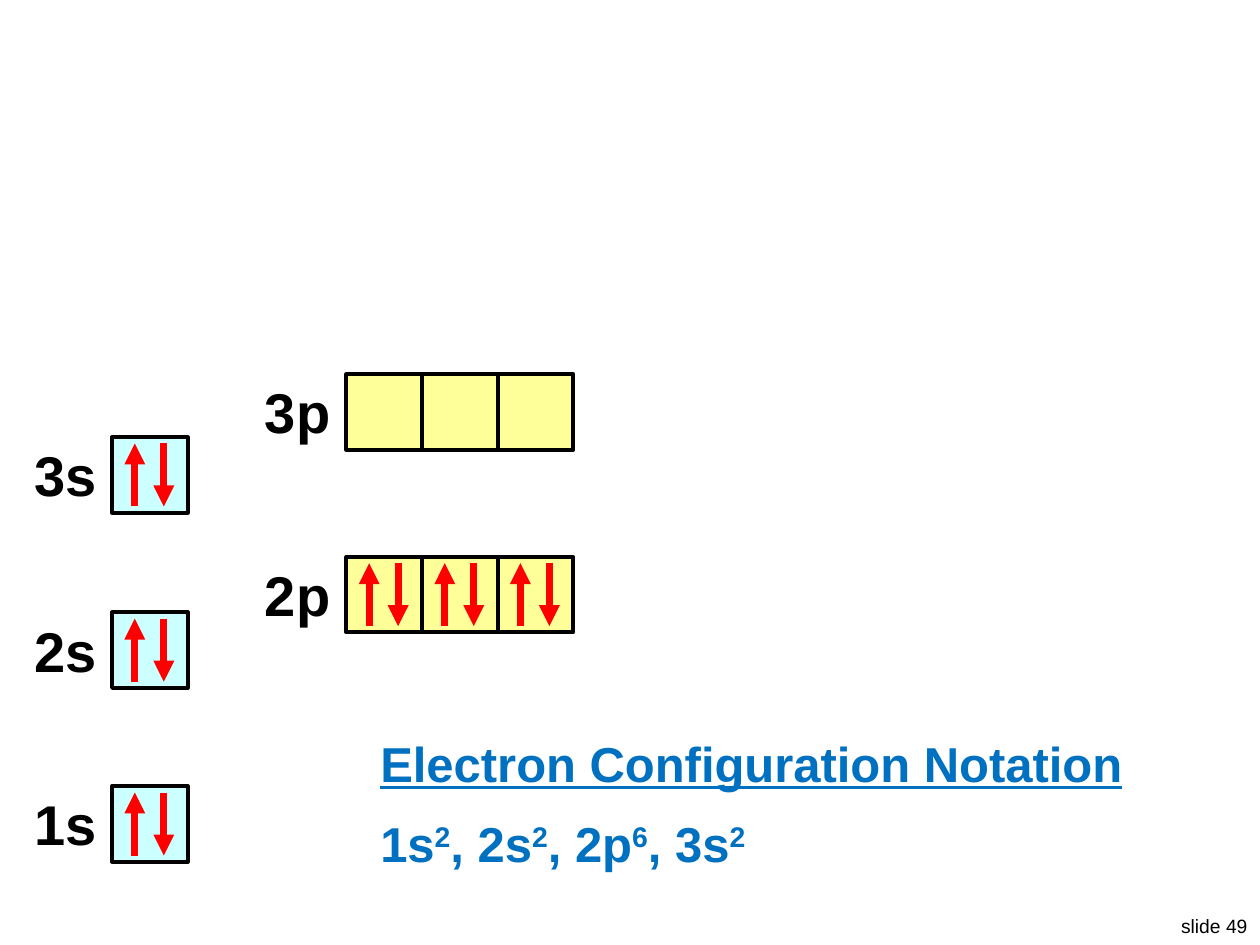
from lxml import etree
from pptx import Presentation
from pptx.dml.color import RGBColor
from pptx.enum.shapes import MSO_CONNECTOR, MSO_SHAPE
from pptx.enum.text import MSO_AUTO_SIZE, PP_ALIGN
from pptx.oxml.ns import qn
from pptx.util import Inches, Pt

RECTANGLE = MSO_SHAPE.RECTANGLE
STRAIGHT = MSO_CONNECTOR.STRAIGHT
LEFT, RIGHT = PP_ALIGN.LEFT, PP_ALIGN.RIGHT
FIT_SHAPE = MSO_AUTO_SIZE.SHAPE_TO_FIT_TEXT

BLACK, RED, BLUE = "000000", "FF0000", "0070C0"
CELL = 0.6
ARROW_INSET, ARROW_LENGTH = 0.05, 0.5
UP_X, DOWN_X = 0.18, 0.41

SUBSHELLS = {
    "s": {"left": 0.89, "label": (0.17, 0.7), "cells": 1, "fill": "CCFFFF"},
    "p": {"left": 2.75, "label": (2, 0.72), "cells": 3, "fill": "FFFF99"},
}
ORBITALS = [
    ("1s", 6.24, True),
    ("2s", 4.86, True),
    ("3s", 3.47, True),
    ("2p", 4.42, True),
    ("3p", 2.97, False),
]
HEADING = "Electron Configuration Notation"
CONFIGURATION = [("1s", "2"), (", 2s", "2"), (", 2p", "6"), (", 3s", "2")]


def color(value):
    """Turn a hex string into a colour."""
    return RGBColor.from_string(value)


def add_span(para, text, size, ink=BLACK, bold=False, underline=False, raised=False):
    """Add one formatted run of text to a paragraph."""
    span = para.add_run()
    span.text = text
    font = span.font
    font.name, font.size = "Arial", Pt(size)
    font.bold, font.underline = bold, underline
    font.color.rgb = color(ink)
    if raised:
        span._r.get_or_add_rPr().set("baseline", "30000")


def add_text(page, paragraphs, left, top, width, height, align=LEFT, gap=0):
    """Add a text box whose paragraphs are lists of (text, format) pairs."""
    box = page.shapes.add_textbox(Inches(left), Inches(top), Inches(width), Inches(height))
    frame = box.text_frame
    frame.word_wrap = False
    frame.auto_size = FIT_SHAPE
    for index, spans in enumerate(paragraphs):
        para = frame.paragraphs[0] if index == 0 else frame.add_paragraph()
        para.alignment = align
        if index < len(paragraphs) - 1:
            para.space_after = Pt(gap)
        for text, style in spans:
            add_span(para, text, **style)


def add_cell(page, left, top, fill):
    """Add one orbital box."""
    cell = page.shapes.add_shape(RECTANGLE, Inches(left), Inches(top), Inches(CELL), Inches(CELL))
    cell.shadow.inherit = False
    cell.fill.solid()
    cell.fill.fore_color.rgb = color(fill)
    cell.line.color.rgb = color(BLACK)
    cell.line.width = Pt(2.25)


def add_electron(page, x, start, end):
    """Add one vertical spin arrow pointing from start to end."""
    arrow = page.shapes.add_connector(STRAIGHT, Inches(x), Inches(start), Inches(x), Inches(end))
    arrow.line.color.rgb = color(RED)
    arrow.line.width = Pt(4)
    etree.SubElement(arrow.line._get_or_add_ln(), qn("a:tailEnd"), type="triangle")
    etree.SubElement(arrow._element.spPr, qn("a:effectLst"))


def add_orbital(page, name, top, filled):
    """Add a labelled row of orbital boxes with paired electrons if filled."""
    subshell = SUBSHELLS[name[-1]]
    label_left, label_width = subshell["label"]
    label = [[(name, {"size": 32, "bold": True})]]
    add_text(page, label, label_left, top - 0.02, label_width, 0.64, align=RIGHT)
    lefts = [subshell["left"] + CELL * index for index in range(subshell["cells"])]
    for left in lefts:
        add_cell(page, left, top, subshell["fill"])
    if filled:
        high = top + ARROW_INSET
        low = high + ARROW_LENGTH
        for left in lefts:
            add_electron(page, left + UP_X, low, high)
            add_electron(page, left + DOWN_X, high, low)


def main():
    """Build and save the slide."""
    deck = Presentation()
    deck.slide_width, deck.slide_height = Inches(10), Inches(7.5)
    page = deck.slides.add_slide(deck.slide_layouts[6])
    for name, top, filled in ORBITALS:
        add_orbital(page, name, top, filled)
    style = {"size": 28, "ink": BLUE, "bold": True}
    notation = []
    for subshell, count in CONFIGURATION:
        notation += [(subshell, style), (count, {**style, "raised": True})]
    heading = [(HEADING, {**style, "underline": True})]
    add_text(page, [heading, notation], 2.92, 5.77, 6.16, 1.21, gap=12)
    add_text(page, [[("slide 49", {"size": 11})]], 9.25, 7.21, 0.75, 0.29, align=RIGHT)
    deck.save("out.pptx")


if __name__ == "__main__":
    main()
